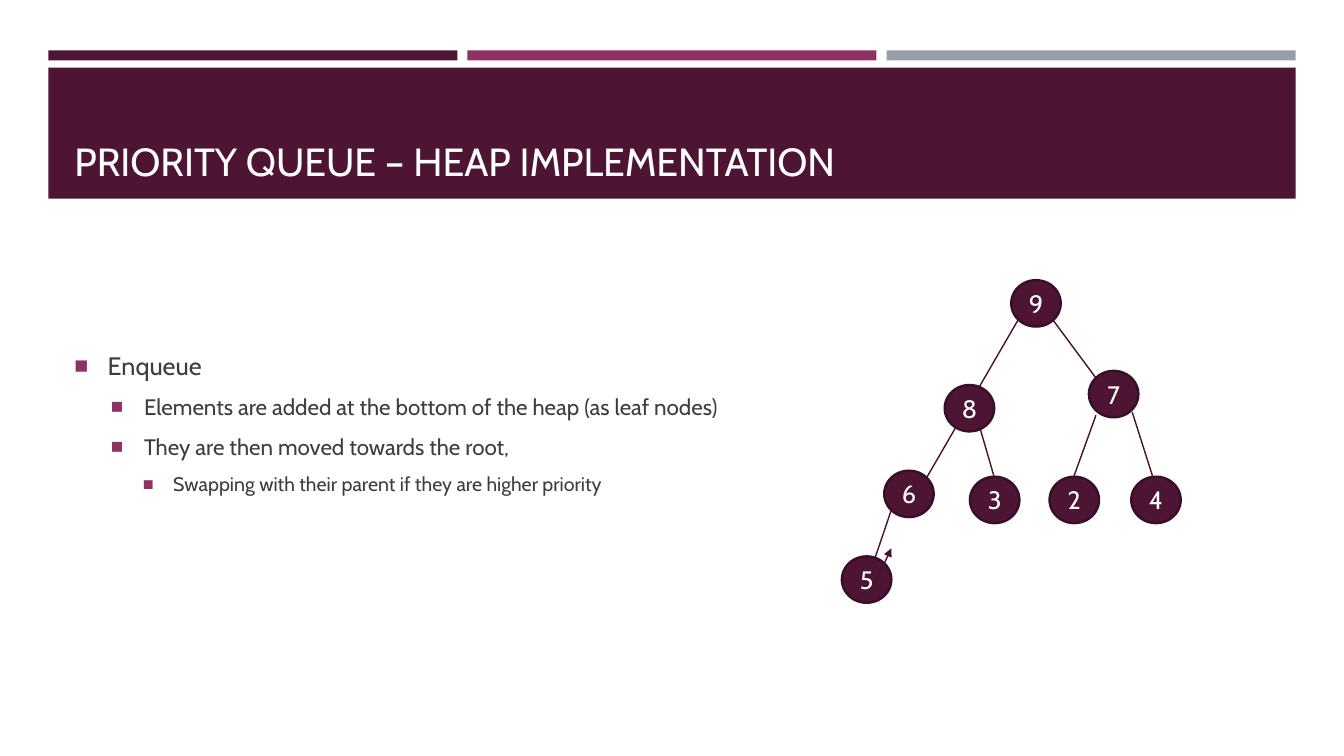
from lxml.etree import SubElement
from pptx import Presentation
from pptx.dml.color import RGBColor
from pptx.enum.shapes import MSO_CONNECTOR, MSO_SHAPE
from pptx.enum.text import MSO_ANCHOR, PP_ALIGN
from pptx.oxml.ns import qn
from pptx.util import Inches, Pt

FONT = "Cabin"
PLUM, MAGENTA, GRAY = "4D1434", "903163", "969FA7"
NODE_LINE, EDGE_COLOR = "390F26", "45122F"
WHITE, TEXT_COLOR = "FFFFFF", "3D3D3D"
NODE_WIDTH, NODE_HEIGHT = 0.49, 0.46

BULLETS = [
    (0, "Enqueue"),
    (1, "Elements are added at the bottom of the heap (as leaf nodes)"),
    (1, "They are then moved towards the root,"),
    (2, "Swapping with their parent if they are higher priority"),
]
LEVELS = [(18, 0.33, 0.33), (16, 0.69, 0.33), (14, 0.98, 0.3)]

NODES = {
    "9": (1.68, 0), "8": (1.02, 1.04), "7": (2.45, 0.9),
    "6": (0.42, 1.89), "3": (1.27, 1.95), "2": (2.06, 1.95),
    "4": (2.87, 1.95), "5": (0, 2.74),
}
EDGES = [
    ((1.75, 0.39), (0.84, 1.96)),
    ((2.09, 0.39), (2.52, 0.97)),
    ((0.49, 2.28), (0.27, 2.93)),
    ((1.33, 1.33), (1.51, 1.95)),
    ((2.52, 1.34), (2.3, 1.95)),
    ((2.88, 1.31), (3.08, 1.94)),
]
SWAP_ARROW = ((0.32, 3.03), (0.49, 2.66))


def color(value):
    return RGBColor.from_string(value)


def style(paragraph, text, size, font_color):
    paragraph.text = text
    paragraph.font.name = FONT
    paragraph.font.size = Pt(size)
    paragraph.font.color.rgb = color(font_color)


def add_filled(slide, kind, left, top, width, height, fill):
    shape = slide.shapes.add_shape(
        kind, Inches(left), Inches(top), Inches(width), Inches(height))
    shape.shadow.inherit = False
    shape.fill.solid()
    shape.fill.fore_color.rgb = color(fill)
    shape.line.fill.background()
    return shape


def add_text_frame(slide, left, top, width, height, anchor):
    box = slide.shapes.add_textbox(
        Inches(left), Inches(top), Inches(width), Inches(height))
    frame = box.text_frame
    frame.word_wrap = True
    frame.vertical_anchor = anchor
    return frame


def add_header(slide, left, top, width):
    gap = 0.1
    bar_width = (width - 2 * gap) / 3
    for index, fill in enumerate((PLUM, MAGENTA, GRAY)):
        add_filled(slide, MSO_SHAPE.RECTANGLE,
                   left + index * (bar_width + gap), top, bar_width, 0.1, fill)
    add_filled(slide, MSO_SHAPE.RECTANGLE, left, top + 0.17, width, 1.3, PLUM)
    frame = add_text_frame(slide, left + 0.16, top + 0.27, width - 0.31, 1.11,
                           MSO_ANCHOR.BOTTOM)
    style(frame.paragraphs[0], "PRIORITY QUEUE – HEAP IMPLEMENTATION", 28, WHITE)


def add_bullet(paragraph, indent, hanging):
    properties = paragraph._p.get_or_add_pPr()
    properties.set("marL", str(Inches(indent)))
    properties.set("indent", str(-Inches(hanging)))
    bullet_color = SubElement(properties, qn("a:buClr"))
    SubElement(bullet_color, qn("a:srgbClr"), val=MAGENTA)
    SubElement(properties, qn("a:buSzPct"), val="92000")
    SubElement(properties, qn("a:buFont"), typeface="Arial")
    SubElement(properties, qn("a:buChar"), char="■")


def add_body(slide, left, top, width, height):
    frame = add_text_frame(slide, left, top, width, height, MSO_ANCHOR.MIDDLE)
    for index, (level, text) in enumerate(BULLETS):
        paragraph = frame.add_paragraph() if index else frame.paragraphs[0]
        size, indent, hanging = LEVELS[level]
        style(paragraph, text, size, TEXT_COLOR)
        paragraph.level = level
        paragraph.space_before = Pt(size * 0.2)
        paragraph.space_after = Pt(6)
        add_bullet(paragraph, indent, hanging)


def add_edge(slide, left, top, start, end, arrow=False):
    edge = slide.shapes.add_connector(
        MSO_CONNECTOR.STRAIGHT,
        Inches(left + start[0]), Inches(top + start[1]),
        Inches(left + end[0]), Inches(top + end[1]))
    edge.line.color.rgb = color(EDGE_COLOR)
    edge.line.width = Pt(1)
    if arrow:
        SubElement(edge.line._get_or_add_ln(), qn("a:tailEnd"), type="triangle")
    SubElement(edge._element.spPr, qn("a:effectLst"))


def add_node(slide, left, top, label):
    node = add_filled(slide, MSO_SHAPE.OVAL, left, top,
                      NODE_WIDTH, NODE_HEIGHT, PLUM)
    node.line.color.rgb = color(NODE_LINE)
    node.line.width = Pt(1.75)
    node.text_frame.vertical_anchor = MSO_ANCHOR.MIDDLE
    paragraph = node.text_frame.paragraphs[0]
    style(paragraph, label, 18, WHITE)
    paragraph.alignment = PP_ALIGN.CENTER


def add_heap(slide, left, top):
    for start, end in EDGES:
        add_edge(slide, left, top, start, end)
    for label, (x, y) in NODES.items():
        add_node(slide, left + x, top + y, label)
    add_edge(slide, left, top, *SWAP_ARROW, arrow=True)


def main():
    presentation = Presentation()
    presentation.slide_width = Inches(13.33)
    presentation.slide_height = Inches(7.5)
    slide = presentation.slides.add_slide(presentation.slide_layouts[6])
    add_header(slide, 0.48, 0.5, 12.37)
    add_body(slide, 0.64, 2.38, 12.06, 3.63)
    add_heap(slide, 8.35, 2.78)
    presentation.save("out.pptx")


if __name__ == "__main__":
    main()
